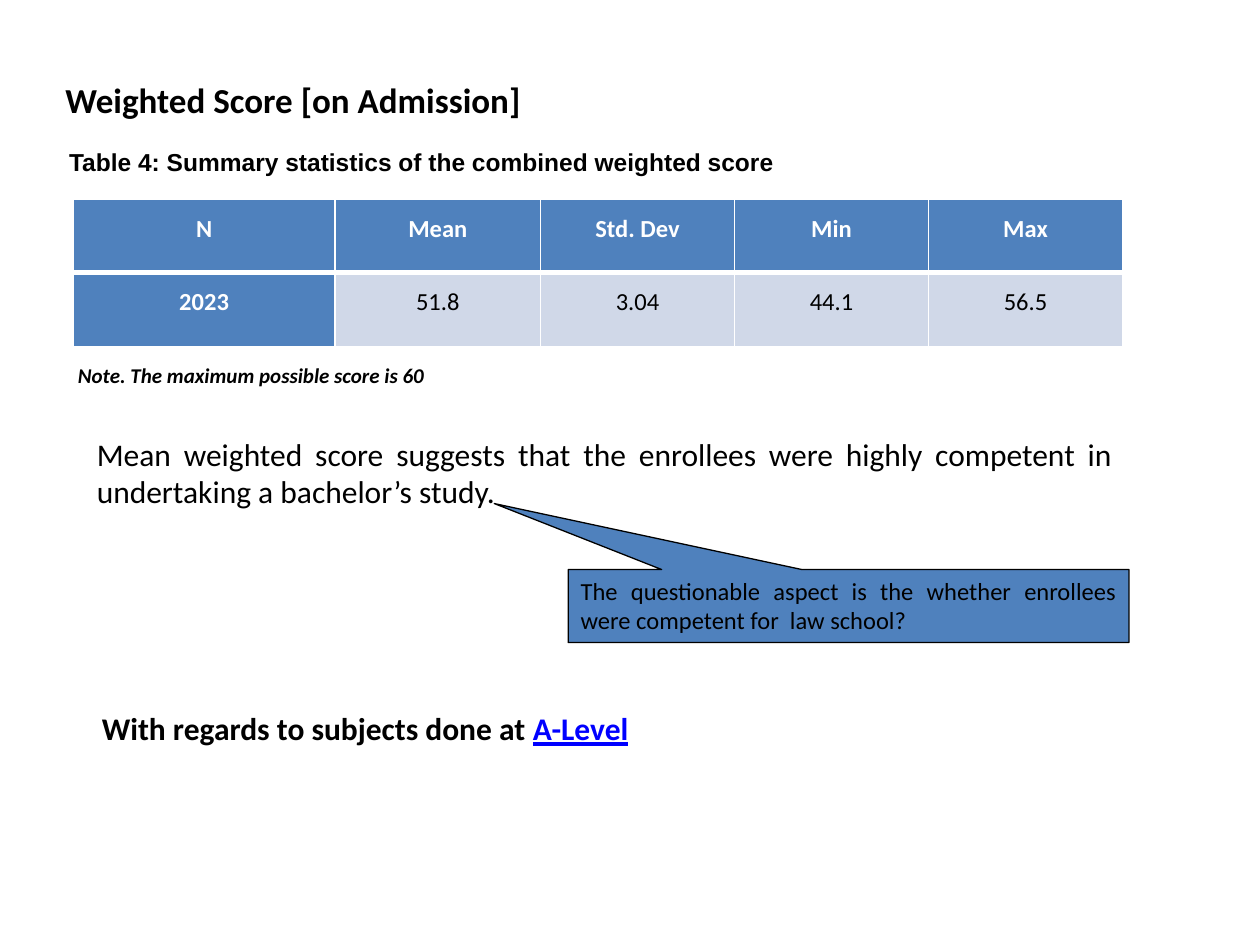
"""Build the weighted admission score slide."""
from dataclasses import dataclass

from lxml import etree
from pptx import Presentation
from pptx.dml.color import RGBColor
from pptx.enum.shapes import MSO_SHAPE
from pptx.enum.text import MSO_ANCHOR, MSO_AUTO_SIZE, PP_ALIGN
from pptx.oxml.ns import qn
from pptx.util import Inches, Pt

CALLOUT = MSO_SHAPE.RECTANGULAR_CALLOUT
TOP, MIDDLE = MSO_ANCHOR.TOP, MSO_ANCHOR.MIDDLE
GROW = MSO_AUTO_SIZE.SHAPE_TO_FIT_TEXT
LEFT, CENTER, JUSTIFY = PP_ALIGN.LEFT, PP_ALIGN.CENTER, PP_ALIGN.JUSTIFY


@dataclass(frozen=True)
class Theme:
    body_font: str = "Calibri"
    caption_font: str = "Arial"
    ink: str = "000000"
    white: str = "FFFFFF"
    accent: str = "4F81BD"
    band: str = "D0D8E8"
    link: str = "0000FF"
    heading: int = 20
    statement: int = 18
    detail: int = 14
    note: int = 12
    thin: int = 1
    thick: int = 3


THEME = Theme()


@dataclass(frozen=True)
class Box:
    left: float
    top: float
    width: float
    height: float

    def emu(self) -> tuple:
        return tuple(map(Inches, (self.left, self.top, self.width, self.height)))


@dataclass(frozen=True)
class Run:
    text: str
    size: int
    bold: bool = False
    italic: bool = False
    underline: bool = False
    color: str = THEME.ink
    font: str = THEME.body_font


@dataclass(frozen=True)
class TextBlock:
    box: Box
    runs: tuple[Run, ...]
    align: PP_ALIGN = JUSTIFY
    anchor: MSO_ANCHOR = TOP
    wrap: bool = True


@dataclass(frozen=True)
class Column:
    heading: str
    value: str
    width: float


HEADING = TextBlock(Box(0.42, 0.57, 8.5, 0.44),
                    (Run("Weighted Score [on Admission]", THEME.heading, bold=True),))
CAPTION = TextBlock(Box(0.45, 1.11, 7.96, 0.34),
                    (Run("Table 4: Summary statistics of the combined weighted score",
                         THEME.detail, bold=True, font=THEME.caption_font),),
                    anchor=MIDDLE)
NOTE = TextBlock(Box(0.52, 2.83, 2.99, 0.3),
                 (Run("Note. The maximum possible score is 60", THEME.note,
                      bold=True, italic=True),),
                 align=LEFT, wrap=False)
FINDING = TextBlock(Box(0.67, 3.4, 8.26, 0.71),
                    (Run("Mean weighted score suggests that the enrollees were highly "
                         "competent in undertaking a bachelor’s study.", THEME.statement),))
NEXT_TOPIC = TextBlock(Box(0.71, 5.58, 8.26, 0.4),
                       (Run("With regards to subjects done at ", THEME.statement, bold=True),
                        Run("A-Level", THEME.statement, bold=True, underline=True,
                            color=THEME.link)))
QUESTION = TextBlock(Box(4.51, 4.52, 4.45, 0.58),
                     (Run("The questionable aspect is the whether enrollees were "
                          "competent for  law school?", THEME.detail),))
QUESTION_POINTER = (-0.632, -1.403)

STATISTICS = (
    Column("N", "2023", 2.08),
    Column("Mean", "51.8", 1.63),
    Column("Std. Dev", "3.04", 1.54),
    Column("Min", "44.1", 1.54),
    Column("Max", "56.5", 1.54),
)
STATISTICS_BOX = Box(0.58, 1.58, sum(column.width for column in STATISTICS), 1.17)


def write_runs(paragraph, runs: tuple[Run, ...], align: PP_ALIGN) -> None:
    paragraph.alignment = align
    for content in runs:
        run = paragraph.add_run()
        run.text = content.text
        font = run.font
        font.name, font.size = content.font, Pt(content.size)
        font.bold, font.italic = content.bold, content.italic
        font.underline = content.underline
        font.color.rgb = RGBColor.from_string(content.color)


def fill_frame(frame, block: TextBlock) -> None:
    frame.word_wrap = block.wrap
    frame.vertical_anchor = block.anchor
    write_runs(frame.paragraphs[0], block.runs, block.align)


def add_text(slide, block: TextBlock) -> None:
    frame = slide.shapes.add_textbox(*block.box.emu()).text_frame
    fill_frame(frame, block)
    frame.auto_size = GROW


def add_callout(slide, block: TextBlock, pointer: tuple[float, float]) -> None:
    callout = slide.shapes.add_shape(CALLOUT, *block.box.emu())
    callout.shadow.inherit = False
    callout.adjustments[0], callout.adjustments[1] = pointer
    callout.fill.solid()
    callout.fill.fore_color.rgb = RGBColor.from_string(THEME.accent)
    callout.line.color.rgb = RGBColor.from_string(THEME.ink)
    callout.line.width = Pt(0.75)
    fill_frame(callout.text_frame, block)


def set_borders(cell, top: int, bottom: int) -> None:
    properties = cell._tc.get_or_add_tcPr()
    widths = {"a:lnL": THEME.thin, "a:lnR": THEME.thin, "a:lnT": top, "a:lnB": bottom}
    for position, (edge, width) in enumerate(widths.items()):
        line = etree.Element(qn(edge), w=str(Pt(width)))
        solid = etree.SubElement(line, qn("a:solidFill"))
        etree.SubElement(solid, qn("a:srgbClr"), val=THEME.white)
        properties.insert(position, line)


def fill_cell(cell, text: str, is_heading: bool) -> None:
    cell.margin_left = cell.margin_right = Inches(0.07)
    cell.margin_top = cell.margin_bottom = 0
    cell.fill.solid()
    cell.fill.fore_color.rgb = RGBColor.from_string(THEME.accent if is_heading else THEME.band)
    color = THEME.white if is_heading else THEME.ink
    paragraph = cell.text_frame.paragraphs[0]
    paragraph.line_spacing = 1.5
    write_runs(paragraph, (Run(text, THEME.detail, bold=is_heading, color=color),), CENTER)


def add_statistics(slide, columns: tuple[Column, ...], box: Box) -> None:
    table = slide.shapes.add_table(2, len(columns), *box.emu()).table
    for index, column in enumerate(columns):
        table.columns[index].width = Inches(column.width)
        heading, value = table.cell(0, index), table.cell(1, index)
        fill_cell(heading, column.heading, True)
        fill_cell(value, column.value, index == 0)
        set_borders(heading, THEME.thin, THEME.thick)
        set_borders(value, THEME.thick, THEME.thin)


def main() -> None:
    presentation = Presentation()
    presentation.slide_width, presentation.slide_height = Inches(10), Inches(7.5)
    slide = presentation.slides.add_slide(presentation.slide_layouts[6])
    add_text(slide, HEADING)
    add_statistics(slide, STATISTICS, STATISTICS_BOX)
    add_text(slide, CAPTION)
    add_callout(slide, QUESTION, QUESTION_POINTER)
    for block in (NOTE, FINDING, NEXT_TOPIC):
        add_text(slide, block)
    presentation.save("out.pptx")


if __name__ == "__main__":
    main()
